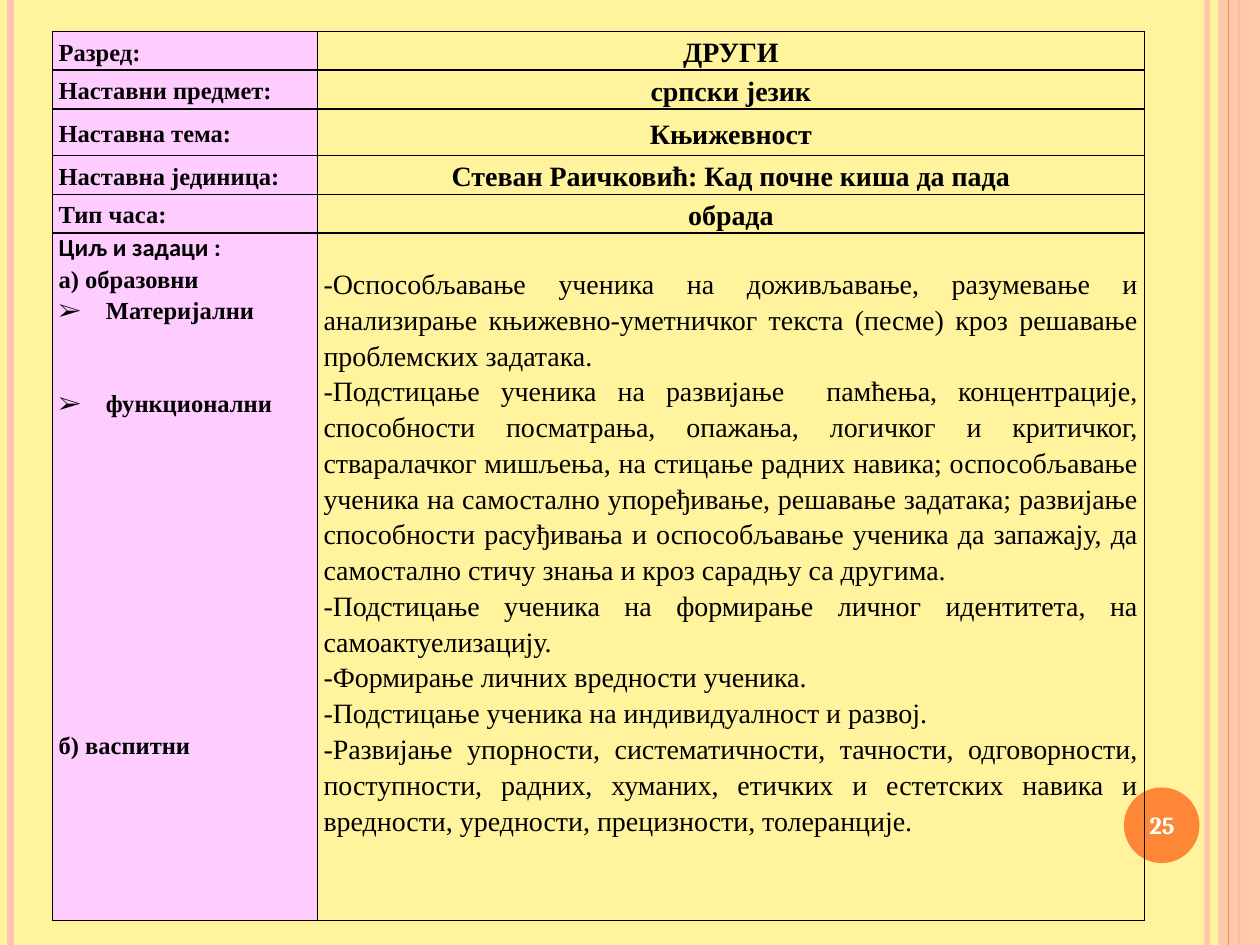
from copy import deepcopy
from lxml.etree import SubElement
from pptx import Presentation
from pptx.dml.color import RGBColor
from pptx.enum.shapes import MSO_CONNECTOR as Connector, MSO_SHAPE as Shape
from pptx.enum.text import MSO_ANCHOR as Anchor, PP_ALIGN as Align
from pptx.oxml.ns import qn
from pptx.util import Pt

COLORS = {"page": "FFF39D", "peach": "FEC3AE", "orange": "FE8637",
          "label": "FFCCFF", "text": "000000", "number": "FFFFFF"}
SERIF = "Times New Roman"
PAGE_WIDTH, PAGE_HEIGHT = 720, 540

STRIPES = [(689.75, "peach", 3, 93), (6, "peach", 4.5, 100),
           (708, "orange", 1.5, 100)]
FRONT_STRIPE = (702, "orange", 0.75, 100)
BAND = (696.25, 0, 23.75, PAGE_HEIGHT)
BADGE = (642.25, 450, 43.2, 43.2)
NUMBER_BOX = (640, 450.5, 48, 41)
PAGE_NUMBER = "25"

TABLE_LEFT, TABLE_TOP = 30, 18
COLUMN_WIDTHS = [151.4, 472.5]
ROW_HEIGHTS = [21, 21, 26.8, 20.9, 20.9, 393]
FACTS = [
    ("Разред:", "ДРУГИ"),
    ("Наставни предмет:", "српски језик"),
    ("Наставна тема:", "Књижевност"),
    ("Наставна јединица:", "Стеван Раичковић: Кад почне киша да пада"),
    ("Тип часа:", "обрада"),
]
GOAL_LABELS = [
    {"text": "Циљ и задаци :", "font": "Calibri", "spacing": 1},
    {"text": "а) образовни"},
    {"text": "Материјални", "bullet": True},
    {"text": "функционални", "bullet": True, "before": 35.5},
    {"text": "б) васпитни", "before": 177.5},
]
GOALS = [
    ("-Оспособљавање ученика на доживљавање, разумевање и анализирање "
     "књижевно-уметничког текста (песме) кроз решавање проблемских задатака.", Align.JUSTIFY),
    ("-Подстицање ученика на развијање  памћења, концентрације, способности "
     "посматрања, опажања, логичког и критичког, стваралачког мишљења, на стицање "
     "радних навика; оспособљавање ученика на самостално упоређивање, решавање "
     "задатака; развијање способности расуђивања и оспособљавање ученика да запажају, "
     "да самостално стичу знања и кроз сарадњу са другима.", Align.JUSTIFY),
    ("-Подстицање ученика на формирање личног идентитета, на самоактуелизацију.",
     Align.JUSTIFY),
    ("-Формирање личних вредности ученика.", Align.LEFT),
    ("-Подстицање ученика на индивидуалност и развој.", Align.LEFT),
    ("-Развијање упорности, систематичности, тачности, одговорности, поступности, "
     "радних, хуманих, етичких и естетских навика и вредности, уредности, "
     "прецизности, толеранције.", Align.JUSTIFY),
]
GOALS_TOP = 18.25


def paint(fill, color, opacity=100):
    fill.solid()
    fill.fore_color.rgb = RGBColor.from_string(COLORS[color])
    if opacity < 100:
        choice = fill._xPr.find(qn("a:solidFill"))[0]
        SubElement(choice, qn("a:alpha"), val=str(opacity * 1000))


def add_stripe(page, x, color, width, opacity):
    stripe = page.shapes.add_connector(
        Connector.STRAIGHT, Pt(x), Pt(0), Pt(x), Pt(PAGE_HEIGHT))
    stripe.line.width = Pt(width)
    paint(stripe.line.fill, color, opacity)
    SubElement(stripe._element.spPr, qn("a:effectLst"))


def add_plain(page, kind, place, color, opacity=100):
    shape = page.shapes.add_shape(kind, *map(Pt, place))
    shape.shadow.inherit = False
    paint(shape.fill, color, opacity)
    shape.line.fill.background()


def write(para, text, size, align=Align.LEFT, bold=True, font=SERIF,
          color="text", spacing=1.15, before=0, bullet=False):
    para.text = text
    para.alignment = align
    para.line_spacing = spacing
    para.space_before = Pt(before)
    span = para.runs[0]
    span.font.size, span.font.bold, span.font.name = Pt(size), bold, font
    span.font.color.rgb = RGBColor.from_string(COLORS[color])
    ending = SubElement(para._p, qn("a:endParaRPr"), sz=str(size * 100))
    ending.extend(deepcopy(child) for child in span._r.rPr)
    if bullet:
        props = para._p.get_or_add_pPr()
        props.set("marL", str(Pt(27)))
        props.set("indent", str(-Pt(27)))
        SubElement(props, qn("a:buFont"), typeface=SERIF)
        SubElement(props, qn("a:buChar"), char="➢")


def paragraphs(frame, count):
    return [frame.paragraphs[0]] + [frame.add_paragraph() for _ in range(count - 1)]


def style_cell(cell, fill):
    cell.margin_left = cell.margin_right = Pt(3.5)
    cell.margin_top = cell.margin_bottom = Pt(0)
    props = cell._tc.get_or_add_tcPr()
    for side in ("lnL", "lnR", "lnT", "lnB"):
        border = SubElement(props, qn(f"a:{side}"), w=str(Pt(1)))
        solid = SubElement(border, qn("a:solidFill"))
        SubElement(solid, qn("a:srgbClr"), val=COLORS["text"])
    if fill:
        paint(cell.fill, fill)
    else:
        cell.fill.background()


def add_plan(page):
    table = page.shapes.add_table(
        len(ROW_HEIGHTS), len(COLUMN_WIDTHS), Pt(TABLE_LEFT), Pt(TABLE_TOP),
        Pt(sum(COLUMN_WIDTHS)), Pt(sum(ROW_HEIGHTS))).table
    table.first_row = table.horz_banding = False
    for column, width in zip(table.columns, COLUMN_WIDTHS):
        column.width = Pt(width)
    for row, height in zip(table.rows, ROW_HEIGHTS):
        row.height = Pt(height)
        for cell, fill in zip(row.cells, ("label", None)):
            style_cell(cell, fill)

    for index, (label, value) in enumerate(FACTS):
        label_cell, value_cell = table.cell(index, 0), table.cell(index, 1)
        label_cell.vertical_anchor = value_cell.vertical_anchor = Anchor.MIDDLE
        write(label_cell.text_frame.paragraphs[0], label, 14)
        write(value_cell.text_frame.paragraphs[0], value, 16, Align.CENTER)

    label_cell, goals_cell = table.cell(len(FACTS), 0), table.cell(len(FACTS), 1)
    goals_cell.margin_top = Pt(GOALS_TOP)
    for para, item in zip(paragraphs(label_cell.text_frame, len(GOAL_LABELS)), GOAL_LABELS):
        write(para, size=14, **item)
    for para, (text, align) in zip(paragraphs(goals_cell.text_frame, len(GOALS)), GOALS):
        write(para, text, 16, align, bold=False)


def main():
    deck = Presentation()
    deck.slide_width, deck.slide_height = Pt(PAGE_WIDTH), Pt(PAGE_HEIGHT)
    page = deck.slides.add_slide(deck.slide_layouts[6])
    paint(page.background.fill, "page")

    for stripe in STRIPES:
        add_stripe(page, *stripe)
    add_plain(page, Shape.RECTANGLE, BAND, "peach", 87)
    add_stripe(page, *FRONT_STRIPE)
    add_plain(page, Shape.OVAL, BADGE, "orange")

    box = page.shapes.add_textbox(*map(Pt, NUMBER_BOX))
    box.text_frame.word_wrap = True
    box.text_frame.vertical_anchor = Anchor.MIDDLE
    write(box.text_frame.paragraphs[0], PAGE_NUMBER, 14, Align.CENTER,
          font="Cambria", color="number", spacing=1)

    add_plan(page)
    deck.save("out.pptx")


if __name__ == "__main__":
    main()
